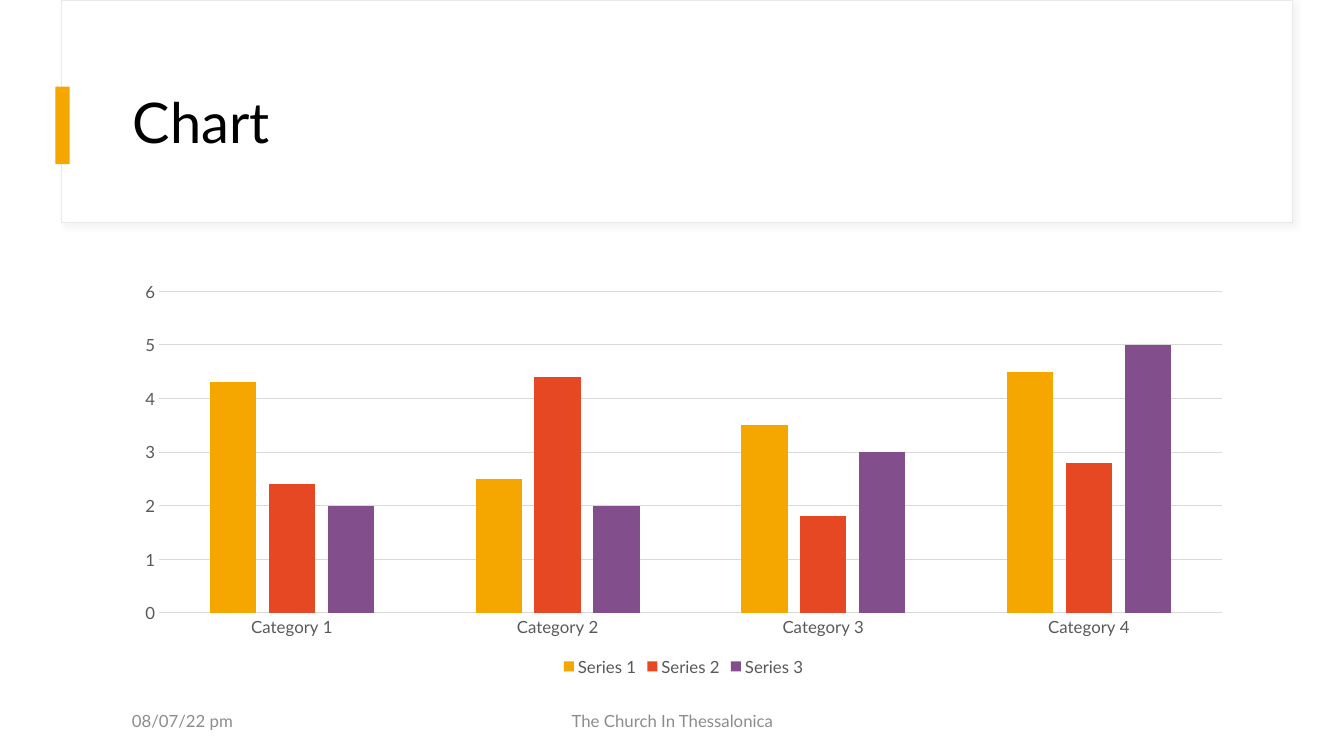
from dataclasses import dataclass

from lxml import etree
from pptx import Presentation
from pptx.chart.data import CategoryChartData
from pptx.dml.color import RGBColor
from pptx.enum.chart import XL_CHART_TYPE, XL_LEGEND_POSITION, XL_TICK_MARK
from pptx.enum.shapes import MSO_SHAPE
from pptx.enum.text import MSO_ANCHOR, PP_ALIGN
from pptx.oxml.ns import nsdecls, qn
from pptx.util import Inches, Pt

RECTANGLE = MSO_SHAPE.RECTANGLE
MIDDLE = MSO_ANCHOR.MIDDLE
LEFT, CENTER = PP_ALIGN.LEFT, PP_ALIGN.CENTER
CLUSTERED = XL_CHART_TYPE.COLUMN_CLUSTERED
BOTTOM = XL_LEGEND_POSITION.BOTTOM
NO_TICK = XL_TICK_MARK.NONE


@dataclass(frozen=True)
class Theme:
    font: str = "Lato"
    paper: str = "FFFFFF"
    ink: str = "000000"
    label: str = "595959"
    muted: str = "8C8C8C"
    rule: str = "D9D9D9"
    frame: str = "E9E9E9"
    series: tuple = ("F5A700", "E64823", "824F8C")
    title_size: int = 40
    chart_size: int = 10
    small_size: int = 12
    hairline: float = 0.75


THEME = Theme()

CATEGORIES = ["Category 1", "Category 2", "Category 3", "Category 4"]
SERIES = {
    "Series 1": (4.3, 2.5, 3.5, 4.5),
    "Series 2": (2.4, 4.4, 1.8, 2.8),
    "Series 3": (2, 2, 3, 5),
}


def apply(target, formats):
    for attribute, value in formats.items():
        setattr(target, attribute, value)


def set_font(font, size, color):
    apply(font, {"name": THEME.font, "size": Pt(size), "bold": False})
    font.color.rgb = RGBColor.from_string(color)


def set_line(line, color):
    line.color.rgb = RGBColor.from_string(color)
    line.width = Pt(THEME.hairline)


def add_panel(slide, box, color):
    panel = slide.shapes.add_shape(RECTANGLE, *map(Inches, box))
    panel.shadow.inherit = False
    panel.fill.solid()
    panel.fill.fore_color.rgb = RGBColor.from_string(color)
    panel.line.fill.background()
    return panel


def add_soft_shadow(panel):
    effects = panel._element.spPr.find(qn("a:effectLst"))
    effects.append(etree.fromstring(
        f'<a:outerShdw {nsdecls("a")} blurRad="{Pt(4)}" dist="{Pt(3)}" '
        f'dir="2700000" algn="tl" rotWithShape="0">'
        f'<a:srgbClr val="{THEME.rule}"><a:alpha val="30000"/></a:srgbClr>'
        f'</a:outerShdw>'))


def add_text(slide, box, wording, size, color, alignment=LEFT):
    frame = slide.shapes.add_textbox(*map(Inches, box)).text_frame
    apply(frame, {"word_wrap": True, "vertical_anchor": MIDDLE})
    paragraph = frame.paragraphs[0]
    paragraph.alignment = alignment
    run = paragraph.add_run()
    run.text = wording
    set_font(run.font, size, color)
    return paragraph


def add_header(slide, box, title):
    left, top, width, height = box
    card = add_panel(slide, box, THEME.paper)
    set_line(card.line, THEME.frame)
    add_soft_shadow(card)
    add_panel(slide, (left - 0.06, top + 0.86, 0.14, 0.77), THEME.series[0])
    heading = add_text(slide, (left + 0.61, top + 0.6, width - 1.09, 1.29),
                       title, THEME.title_size, THEME.ink)
    heading.line_spacing = 0.9


def add_column_chart(slide, box):
    chart_data = CategoryChartData()
    chart_data.categories = CATEGORIES
    for name, values in SERIES.items():
        chart_data.add_series(name, values)
    chart = slide.shapes.add_chart(CLUSTERED, *map(Inches, box), chart_data).chart
    apply(chart, {"has_title": False, "has_legend": True})
    set_font(chart.font, THEME.chart_size, THEME.ink)

    apply(chart.legend, {"position": BOTTOM, "include_in_layout": False})
    set_font(chart.legend.font, THEME.small_size, THEME.label)

    columns = chart.plots[0]
    apply(columns, {"gap_width": 219, "overlap": -27, "vary_by_categories": False})
    for series, color in zip(columns.series, THEME.series):
        series.format.fill.solid()
        series.format.fill.fore_color.rgb = RGBColor.from_string(color)
        series.invert_if_negative = False

    for axis in (chart.category_axis, chart.value_axis):
        apply(axis, {"major_tick_mark": NO_TICK, "minor_tick_mark": NO_TICK})
        set_font(axis.tick_labels.font, THEME.small_size, THEME.label)
    set_line(chart.category_axis.format.line, THEME.rule)
    scale = chart.value_axis
    apply(scale, {"minimum_scale": 0, "maximum_scale": 6, "major_unit": 1,
                  "has_major_gridlines": True})
    scale.format.line.fill.background()
    set_line(scale.major_gridlines.format.line, THEME.rule)


def add_footer(slide, box, date, topic):
    left, top, width, height = box
    topic_width = 4.5
    topic_left = left + (width - topic_width) / 2
    add_text(slide, (left, top, 3, height), date, THEME.small_size, THEME.muted)
    add_text(slide, (topic_left, top, topic_width, height), topic,
             THEME.small_size, THEME.muted, CENTER)


def main():
    deck = Presentation()
    apply(deck, {"slide_width": Inches(13.33), "slide_height": Inches(7.5)})
    slide = deck.slides.add_slide(deck.slide_layouts[6])
    slide.background.fill.solid()
    slide.background.fill.fore_color.rgb = RGBColor.from_string(THEME.paper)
    add_header(slide, (0.61, 0, 12.21, 2.21), "Chart")
    add_column_chart(slide, (1.22, 2.71, 11.12, 4.04))
    add_footer(slide, (1.21, 6.95, 10.92, 0.4), "08/07/22 pm",
               "The Church In Thessalonica")
    deck.save("out.pptx")


if __name__ == "__main__":
    main()
